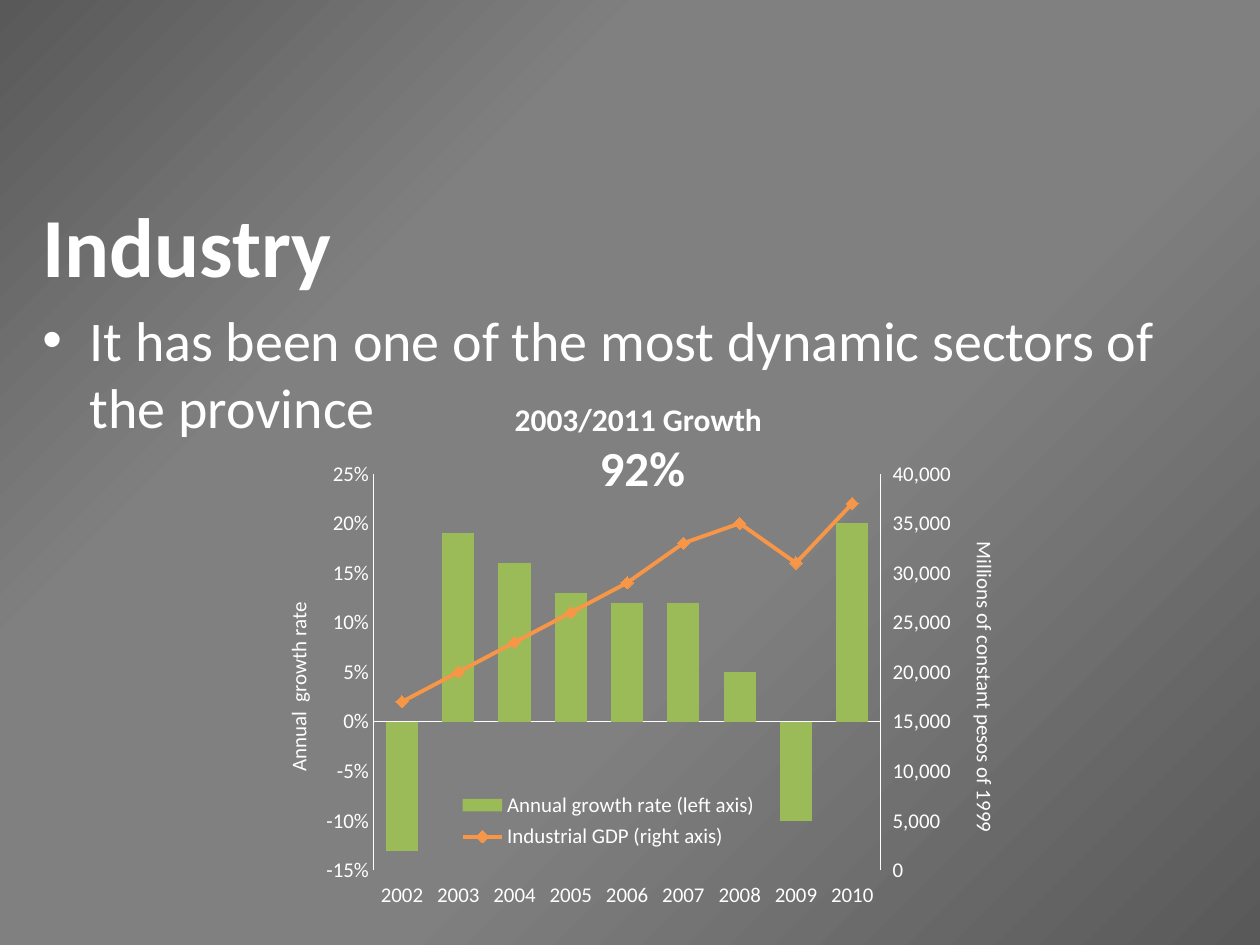
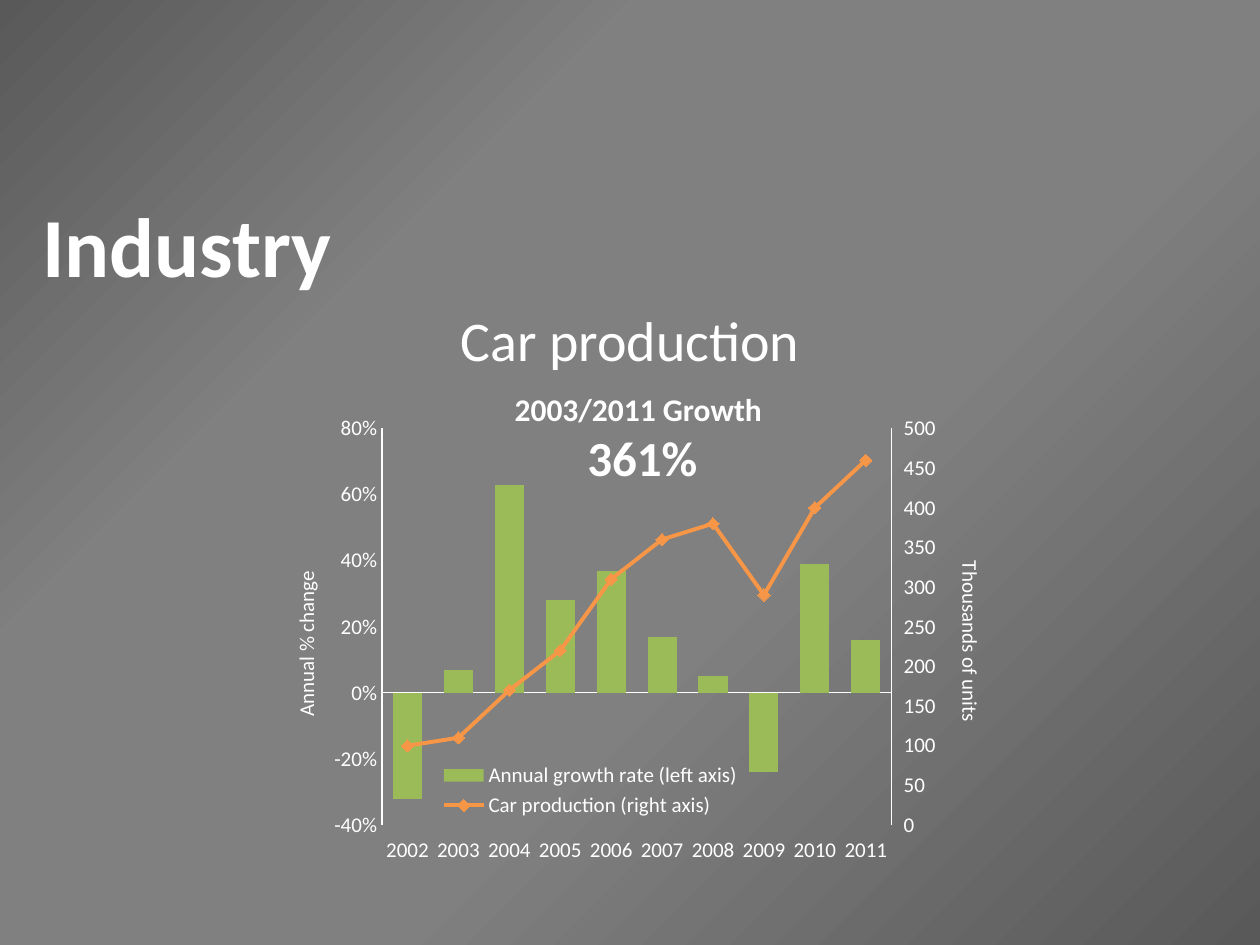
"""Two slides on the growth of industry, each with a bar and line chart."""
from copy import deepcopy

from lxml import etree
from pptx import Presentation
from pptx.chart.axis import CategoryAxis, ValueAxis
from pptx.chart.data import CategoryChartData
from pptx.dml.color import RGBColor
from pptx.enum.chart import (XL_CHART_TYPE, XL_LEGEND_POSITION, XL_MARKER_STYLE,
                             XL_TICK_LABEL_POSITION, XL_TICK_MARK)
from pptx.enum.text import MSO_AUTO_SIZE, PP_ALIGN
from pptx.oxml import parse_xml
from pptx.oxml.ns import nsdecls, qn
from pptx.util import Pt

COLUMNS = XL_CHART_TYPE.COLUMN_CLUSTERED
LEGEND_RIGHT = XL_LEGEND_POSITION.RIGHT
DIAMOND = XL_MARKER_STYLE.DIAMOND
LABELS_LOW = XL_TICK_LABEL_POSITION.LOW
LABELS_HIGH = XL_TICK_LABEL_POSITION.HIGH
NO_TICKS = XL_TICK_MARK.NONE
FIT_SHAPE = MSO_AUTO_SIZE.SHAPE_TO_FIT_TEXT
CENTER = PP_ALIGN.CENTER

FONT = "Calibri"
COLORS = {"text": "FFFFFF", "growth": "9BBB59", "level": "F79646",
          "edge": "595959", "middle": "808080"}
BACKDROP_STOPS = [(0, "edge"), (40, "middle"), (70, "middle"), (100, "edge")]
PLOT_AREA = (0.156, 0.051, 0.684, 0.799)
HANGING = 27
GROWTH_NAME = "Annual growth rate (left axis)"

INDUSTRY_GDP = {
    "place": (147.6, 256.3),
    "years": range(2002, 2011),
    "growth": [-0.13, 0.19, 0.16, 0.13, 0.12, 0.12, 0.05, -0.1, 0.2],
    "level_name": "Industrial GDP (right axis)",
    "level": [17000, 20000, 23000, 26000, 29000, 33000, 35000, 31000, 37000],
    "left": {"title": "Annual  growth rate", "scale": (-0.15, 0.25, 0.05),
             "title_at": (0.03, 0.3)},
    "right": {"title": "Millions of constant pesos of 1999",
              "scale": (0, 40000, 5000), "title_at": (0.955, 0.18)},
    "legend": (0.268, 0.68, 0.41, 0.14),
}
CAR_PRODUCTION = {
    "place": (151.9, 230.4),
    "years": range(2002, 2012),
    "growth": [-0.32, 0.07, 0.63, 0.28, 0.37, 0.17, 0.05, -0.24, 0.39, 0.16],
    "level_name": "Car production (right axis)",
    "level": [100, 110, 170, 220, 310, 360, 380, 290, 400, 460],
    "left": {"title": "Annual % change", "scale": (-0.4, 0.8, 0.2),
             "title_at": (0.03, 0.33)},
    "right": {"title": "Thousands of units", "scale": (0, 500, 50),
              "title_at": (0.92, 0.31)},
    "legend": (0.231, 0.715, 0.41, 0.13),
}


def rgb(name):
    """Return the named palette colour."""
    return RGBColor.from_string(COLORS[name])


def style_font(font, size, bold=False):
    """Apply the shared typeface and colour."""
    font.name, font.size, font.bold = FONT, Pt(size), bold
    font.color.rgb = rgb("text")


def add_run(paragraph, text, size, bold=False):
    """Add one styled run to a paragraph."""
    run = paragraph.add_run()
    run.text = text
    style_font(run.font, size, bold)


def add_slide(prs):
    """Add a blank slide with the shared gradient backdrop."""
    slide = prs.slides.add_slide(prs.slide_layouts[6])
    slide.background.fill.gradient()
    gradient = slide.element.xpath(".//p:bg//a:gradFill")[0]
    stops = "".join(
        f'<a:gs pos="{pos * 1000}"><a:srgbClr val="{COLORS[name]}"/></a:gs>'
        for pos, name in BACKDROP_STOPS)
    gradient.getparent().replace(gradient, parse_xml(
        f'<a:gradFill {nsdecls("a")} rotWithShape="1"><a:gsLst>{stops}</a:gsLst>'
        '<a:path path="circle"><a:fillToRect l="100000" t="100000"/></a:path>'
        '</a:gradFill>'))
    return slide


def add_heading(slide, statement, bulleted):
    """Add the section title with a bulleted or centred statement below."""
    box = slide.shapes.add_textbox(Pt(17.1), Pt(107.2), Pt(686), Pt(410))
    frame = box.text_frame
    frame.word_wrap = True
    title, line = frame.paragraphs[0], frame.add_paragraph()
    for paragraph in (title, line):
        properties = paragraph._p.get_or_add_pPr()
        properties.set("marL", str(Pt(HANGING)))
        properties.set("indent", str(-Pt(HANGING)))
    add_run(title, "Industry", 48, bold=True)
    if bulleted:
        properties = line._p.get_or_add_pPr()
        etree.SubElement(properties, qn("a:buFont")).set("typeface", "Arial")
        etree.SubElement(properties, qn("a:buChar")).set("char", "•")
    else:
        line.alignment = CENTER
    line.space_before = Pt(6.4)
    add_run(line, statement, 32)


def add_growth_callout(slide, top, percentage):
    """Add the total growth figure above the chart."""
    box = slide.shapes.add_textbox(Pt(286.8), Pt(top), Pt(156), Pt(62.6))
    frame = box.text_frame
    frame.word_wrap = False
    frame.auto_size = FIT_SHAPE
    period, figure = frame.paragraphs[0], frame.add_paragraph()
    period.alignment = figure.alignment = CENTER
    add_run(period, "2003/2011 Growth", 18, bold=True)
    add_run(figure, " ", 20, bold=True)
    add_run(figure, percentage, 28, bold=True)


def set_layout(element, index, bounds, inner=False):
    """Place a chart part by fractions of the chart area."""
    for old in element.findall(qn("c:layout")):
        element.remove(old)
    target = '<c:layoutTarget val="inner"/>' if inner else ""
    modes = "".join(f'<c:{key}Mode val="edge"/>' for key in "xy")
    values = "".join(f'<c:{key} val="{value}"/>' for key, value in zip("xywh", bounds))
    element.insert(index, parse_xml(
        f'<c:layout {nsdecls("c")}><c:manualLayout>{target}{modes}{values}'
        '</c:manualLayout></c:layout>'))


def style_axis(axis):
    """Give an axis a thin line, no ticks and no gridlines."""
    axis.has_major_gridlines = False
    axis.major_tick_mark = axis.minor_tick_mark = NO_TICKS
    axis.format.line.color.rgb = rgb("text")
    axis.format.line.width = Pt(0.75)
    style_font(axis.tick_labels.font, 12)


def style_value_axis(axis, settings, number_format, turn):
    """Set scale, number format and turned title of a value axis."""
    style_axis(axis)
    axis.minimum_scale, axis.maximum_scale, axis.major_unit = settings["scale"]
    axis.tick_labels.number_format = number_format
    axis.tick_labels.number_format_is_linked = False
    title = axis.axis_title
    add_run(title.text_frame.paragraphs[0], settings["title"], 12)
    body = title._element.xpath(".//a:bodyPr")[0]
    body.set("rot", str(turn * 60000))
    body.set("vert", "horz")
    set_layout(title._element, 1, settings["title_at"])


def split_to_right_axis(chart):
    """Move the second series to a line plot and return both value axes."""
    area = chart._chartSpace.chart.plotArea
    bars = area.find(qn("c:barChart"))
    level = bars.findall(qn("c:ser"))[1]
    for flag in level.findall(qn("c:invertIfNegative")):
        level.remove(flag)
    lines = parse_xml(
        f'<c:lineChart {nsdecls("c")}><c:grouping val="standard"/>'
        '<c:varyColors val="0"/><c:marker val="1"/>'
        '<c:axId val="5001"/><c:axId val="5002"/></c:lineChart>')
    lines.insert(2, level)
    bars.addnext(lines)
    left = area.find(qn("c:valAx"))
    right = deepcopy(left)
    years = deepcopy(area.find(qn("c:catAx")))
    left.addnext(right)
    right.addnext(years)
    for axis, own, other in ((years, "5001", "5002"), (right, "5002", "5001")):
        axis.find(qn("c:axId")).set("val", own)
        axis.find(qn("c:crossAx")).set("val", other)
    right.find(qn("c:axPos")).set("val", "r")
    right.find(qn("c:crosses")).set("val", "max")
    CategoryAxis(years).visible = False
    return ValueAxis(left), ValueAxis(right)


def style_series(chart):
    """Colour the growth bars and the level line."""
    bars, lines = chart.plots
    bars.gap_width = 75
    bars.vary_by_categories = False
    growth, level = bars.series[0], lines.series[0]
    growth.invert_if_negative = False
    growth.format.fill.solid()
    growth.format.fill.fore_color.rgb = rgb("growth")
    level.smooth = False
    level.format.line.color.rgb = rgb("level")
    level.format.line.width = Pt(2.25)
    level.marker.style, level.marker.size = DIAMOND, 7
    level.marker.format.fill.solid()
    level.marker.format.fill.fore_color.rgb = rgb("level")
    level.marker.format.line.color.rgb = rgb("level")


def add_growth_chart(slide, content):
    """Add yearly growth bars with a level line on a right axis."""
    data = CategoryChartData()
    data.categories = [str(year) for year in content["years"]]
    data.add_series(GROWTH_NAME, content["growth"], "0%")
    data.add_series(content["level_name"], content["level"], "#,##0")
    left, top = content["place"]
    chart = slide.shapes.add_chart(
        COLUMNS, Pt(left), Pt(top), Pt(425.5), Pt(283.7), data).chart
    chart.has_title = False
    style_font(chart.font, 12)
    growth_axis, level_axis = split_to_right_axis(chart)
    style_series(chart)
    style_axis(chart.category_axis)
    chart.category_axis.tick_label_position = LABELS_LOW
    style_value_axis(growth_axis, content["left"], "0%", -90)
    style_value_axis(level_axis, content["right"], "#,##0", 90)
    level_axis.tick_label_position = LABELS_HIGH
    set_layout(chart._chartSpace.chart.plotArea, 0, PLOT_AREA, inner=True)
    chart.has_legend = True
    chart.legend.position = LEGEND_RIGHT
    chart.legend.include_in_layout = False
    style_font(chart.legend.font, 12)
    set_layout(chart.legend._element, 1, content["legend"])


def main():
    """Build both slides and save the presentation."""
    prs = Presentation()
    prs.slide_width, prs.slide_height = Pt(720), Pt(540)

    industry = add_slide(prs)
    add_heading(industry, "It has been one of the most dynamic sectors of the province",
                bulleted=True)
    add_growth_chart(industry, INDUSTRY_GDP)
    add_growth_callout(industry, 225, "92%")

    cars = add_slide(prs)
    add_growth_chart(cars, CAR_PRODUCTION)
    add_heading(cars, "Car production", bulleted=False)
    add_growth_callout(cars, 219.4, "361%")

    prs.save("out.pptx")


if __name__ == "__main__":
    main()
